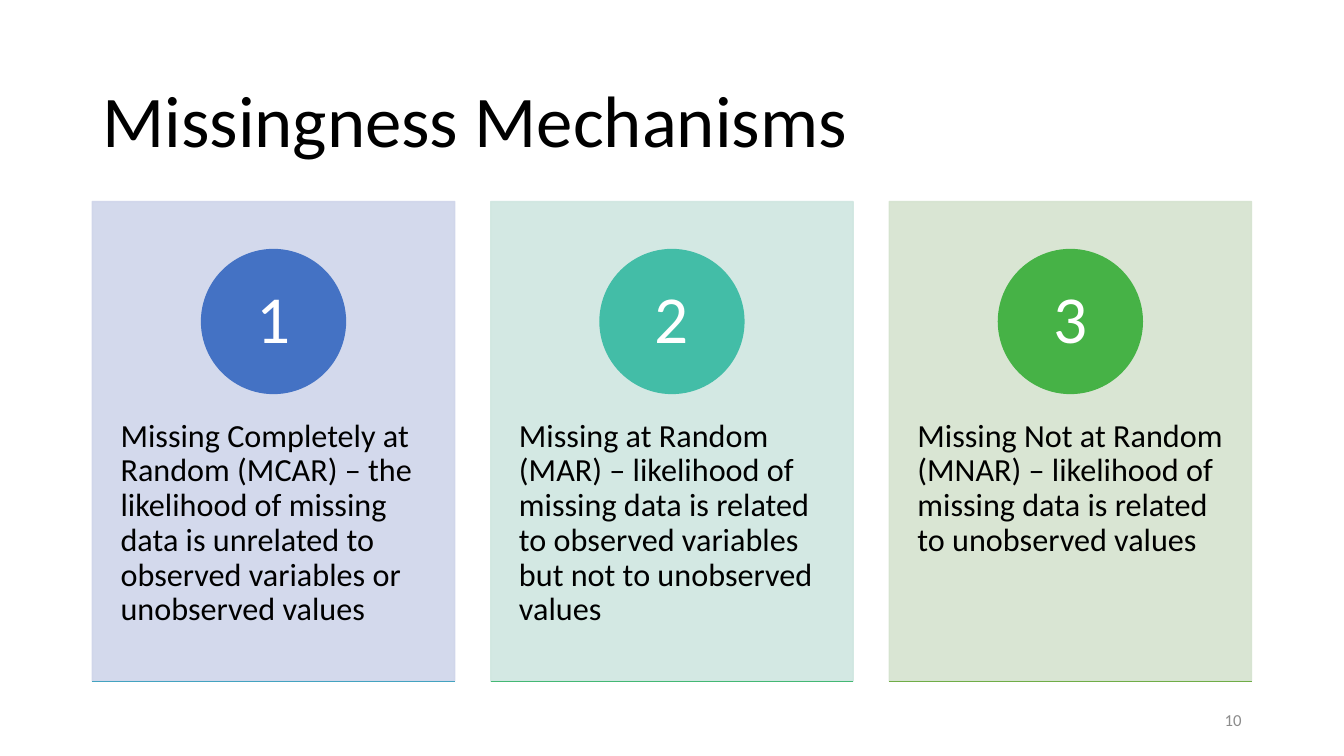
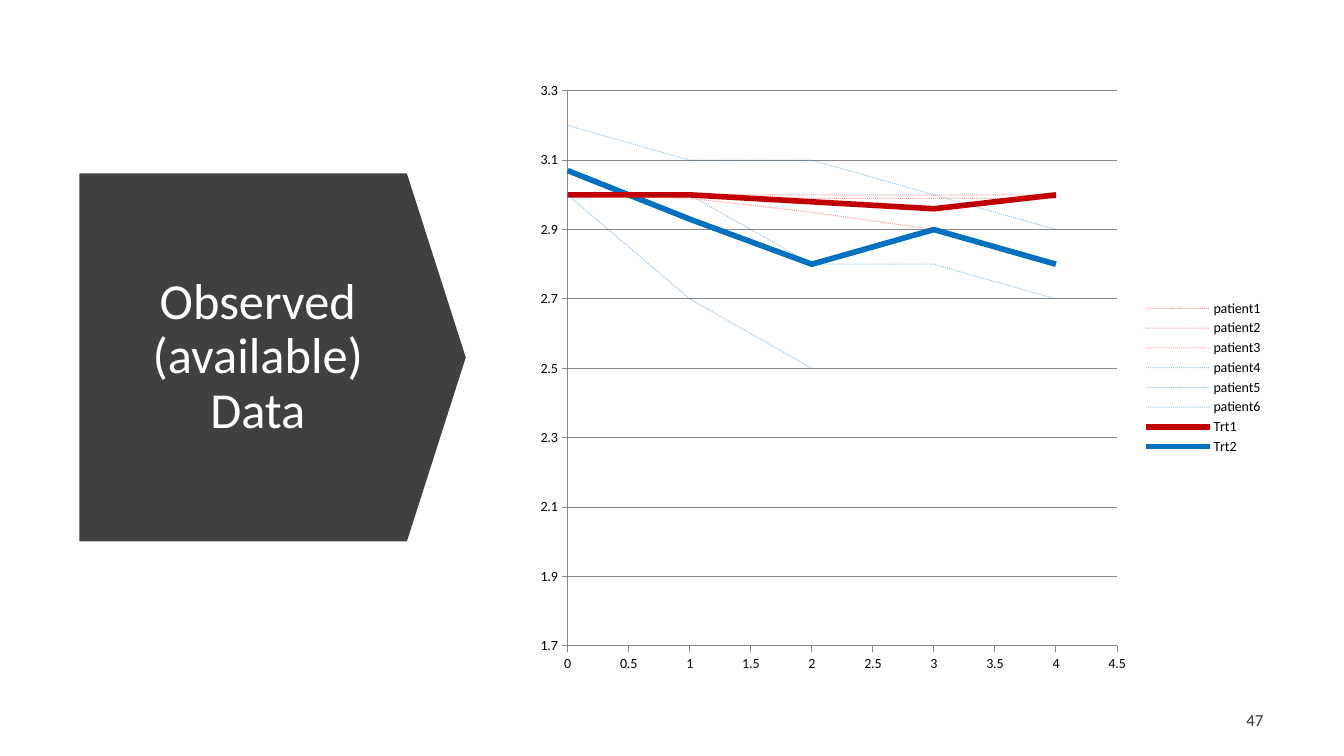
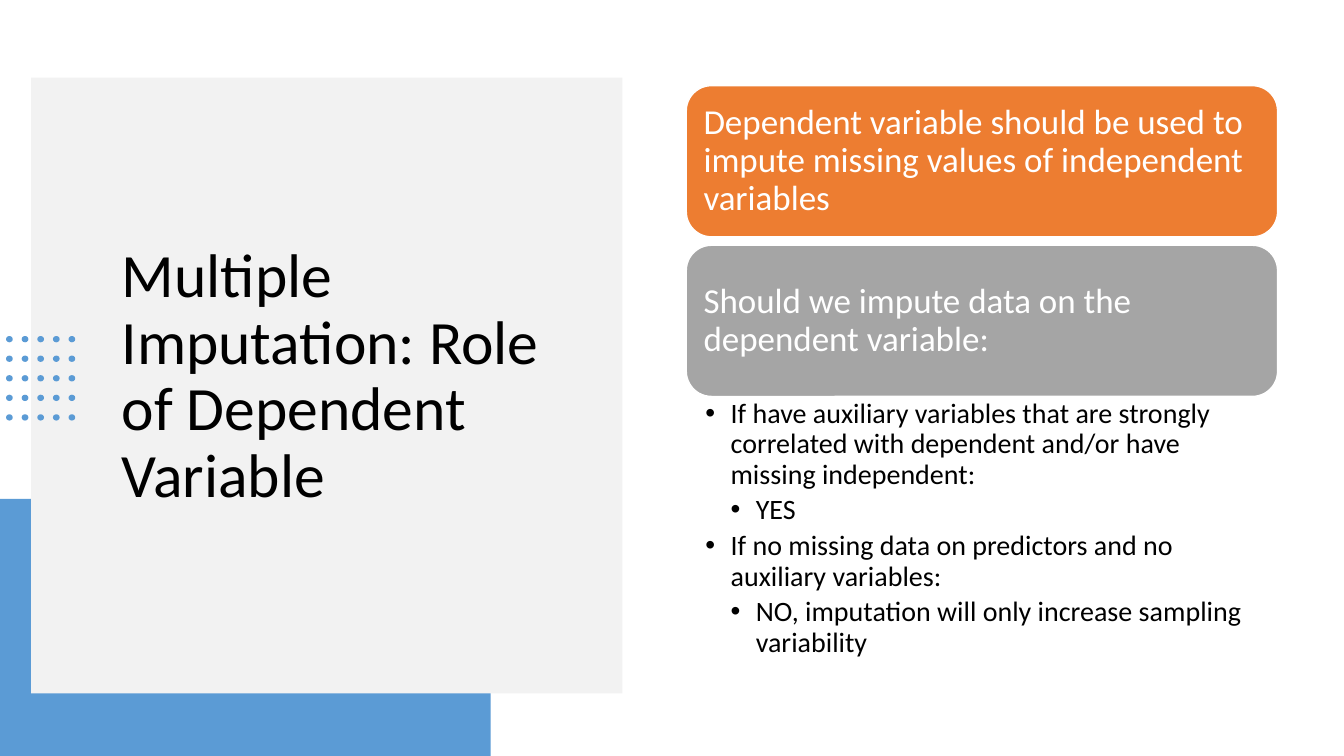
from dataclasses import dataclass
from itertools import product

from lxml.etree import SubElement
from pptx import Presentation
from pptx.chart.data import XyChartData
from pptx.dml.color import RGBColor
from pptx.enum.chart import XL_CHART_TYPE, XL_LEGEND_POSITION, XL_TICK_MARK
from pptx.enum.dml import MSO_LINE
from pptx.enum.shapes import MSO_CONNECTOR, MSO_SHAPE
from pptx.enum.text import MSO_ANCHOR, PP_ALIGN
from pptx.oxml.ns import qn
from pptx.util import Inches, Pt

COLUMNS, ROWS = 160, 90
CELL = Inches(1) / 12


@dataclass(frozen=True)
class Theme:
    font: str = "Calibri"
    black: str = "000000"
    white: str = "FFFFFF"
    charcoal: str = "404040"
    pale: str = "F2F2F2"
    sky: str = "5B9BD5"
    orange: str = "ED7D31"
    grey: str = "A5A5A5"
    axis: str = "878787"
    soft_number: str = "8C8C8C"
    dark_number: str = "333333"
    patient_red: str = "FF0000"
    treatment_red: str = "C00000"
    blue: str = "0070C0"
    title: int = 52
    side_title: int = 44
    arrow_title: int = 36
    numeral: int = 48
    statement: int = 25
    card: int = 23
    bullet: int = 20
    number: int = 12
    chart: int = 10
    leading: float = 0.9


THEME = Theme()

MECHANISMS = [
    ("Missing Completely at Random (MCAR) – the likelihood of missing data is "
     "unrelated to observed variables or unobserved values",
     "CFD5EA", "4472C4", "44A3C0"),
    ("Missing at Random (MAR) – likelihood of missing data is related to "
     "observed variables but not to unobserved values",
     "CFE6E0", "43BDA7", "44B874"),
    ("Missing Not at Random (MNAR) – likelihood of missing data is related to "
     "unobserved values",
     "D5E3CF", "46B246", "70AD47"),
]

PATIENTS = [
    ("patient1", THEME.patient_red, [3, 3, 2.99, 2.99, 2.99]),
    ("patient2", THEME.patient_red, [3, 3, 3, 3, 3]),
    ("patient3", THEME.patient_red, [3, 2.99, 2.95, 2.9]),
    ("patient4", THEME.blue, [3.2, 3.1, 3.1, 3, 2.9]),
    ("patient5", THEME.blue, [3, 3, 2.8, 2.8, 2.7]),
    ("patient6", THEME.blue, [3, 2.7, 2.5]),
]

TREATMENTS = [
    ("Trt1", THEME.treatment_red, [3, 3, 2.98, 2.96, 3]),
    ("Trt2", THEME.blue, [3.07, 2.93, 2.8, 2.9, 2.8]),
]

STATEMENTS = [
    ("Dependent variable should be used to impute missing values of "
     "independent variables", THEME.orange),
    ("Should we impute data on the dependent variable:", THEME.grey),
]

ADVICE = [
    (1, "If have auxiliary variables that are strongly correlated with "
        "dependent and/or have missing independent:"),
    (2, "YES"),
    (1, "If no missing data on predictors and no auxiliary variables:"),
    (2, "NO, imputation will only increase sampling variability"),
]


def cells(*counts):
    return [round(count * CELL) for count in counts]


def rgb(colour):
    return RGBColor.from_string(colour)


def fade(element, percent):
    for colour in element.iter(qn("a:srgbClr")):
        SubElement(colour, qn("a:alpha")).set("val", str(percent * 1000))


def write(box, lines, size, colour, align=PP_ALIGN.LEFT,
          anchor=MSO_ANCHOR.MIDDLE, insets=(0.1, 0.05, 0.1, 0.05)):
    frame = box.text_frame
    frame.text = "\n".join(lines)
    frame.word_wrap = True
    frame.vertical_anchor = anchor
    (frame.margin_left, frame.margin_top,
     frame.margin_right, frame.margin_bottom) = map(Inches, insets)
    for para in frame.paragraphs:
        para.alignment = align
        para.line_spacing = THEME.leading
        for span in para.runs:
            span.font.name = THEME.font
            span.font.size = Pt(size)
            span.font.color.rgb = rgb(colour)
    return frame


def add_text(page, place, lines, size, colour=THEME.black, **layout):
    box = page.shapes.add_textbox(*cells(*place))
    return write(box, lines, size, colour, **layout)


def add_panel(shapes, kind, place, fill, line=None):
    panel = shapes.add_shape(kind, *cells(*place))
    panel.shadow.inherit = False
    panel.fill.solid()
    panel.fill.fore_color.rgb = rgb(fill)
    if line:
        panel.line.color.rgb = rgb(line)
        panel.line.width = Pt(1)
    else:
        panel.line.fill.background()
    return panel


def add_rule(page, left, top, width, colour):
    rule = page.shapes.add_connector(
        MSO_CONNECTOR.STRAIGHT, *cells(left, top, left + width, top))
    rule.line.color.rgb = rgb(colour)
    rule.line.width = Pt(1)
    SubElement(rule.element.spPr, qn("a:effectLst"))


def add_page_number(page, number, right, colour):
    width = 7
    add_text(page, (right - width, 83.4, width, 4.8), [number],
             THEME.number, colour, align=PP_ALIGN.RIGHT)


def add_bullets(page, place, items):
    frame = add_text(page, place, [text for level, text in items],
                     THEME.bullet, anchor=MSO_ANCHOR.TOP,
                     insets=(0.19, 0.03, 0.19, 0.03))
    step = Inches(0.25)
    for para, (level, text) in zip(frame.paragraphs, items):
        para.level = level
        para.space_after = Pt(4)
        properties = para._p.get_or_add_pPr()
        properties.set("marL", str(level * step))
        properties.set("indent", str(-step))
        SubElement(properties, qn("a:buFont")).set("typeface", "Arial")
        SubElement(properties, qn("a:buChar")).set("char", "•")


def add_mechanism_card(page, place, numeral, text, tint, accent, edge):
    left, top, width, height = place
    card = add_panel(page.shapes, MSO_SHAPE.RECTANGLE, place, tint, tint)
    fade(card.element.spPr, 90)
    write(card, [text], THEME.card, THEME.black, anchor=MSO_ANCHOR.TOP,
          insets=(0.28, 2.16, 0.28, 0.36))
    size = 0.3 * height
    circle = add_panel(
        page.shapes, MSO_SHAPE.OVAL,
        (left + (width - size) / 2, top + 0.1 * height, size, size),
        accent, accent)
    write(circle, [numeral], THEME.numeral, THEME.white,
          align=PP_ALIGN.CENTER, insets=(0.11, 0.01, 0.11, 0.01))
    add_rule(page, left, top + height, width, edge)


def add_dot_grid(page, left, top, across, down, count):
    dots = page.shapes.add_group_shape()
    for column, row in product(range(count), repeat=2):
        place = (left + column * across, top + row * down, 0.8, 0.75)
        add_panel(dots.shapes, MSO_SHAPE.OVAL, place, THEME.sky)


def style_axis(axis, low, high, step):
    axis.minimum_scale, axis.maximum_scale = low, high
    axis.major_unit = step
    axis.major_tick_mark = XL_TICK_MARK.OUTSIDE
    axis.minor_tick_mark = XL_TICK_MARK.NONE
    axis.format.line.color.rgb = rgb(THEME.axis)
    axis.tick_labels.number_format = "General"
    axis.tick_labels.number_format_is_linked = False


def place_plot(chart, **shares):
    area = chart.element.find(".//" + qn("c:plotArea"))
    layout = area.find(qn("c:layout"))
    if layout is None:
        layout = area.makeelement(qn("c:layout"))
        area.insert(0, layout)
    manual = SubElement(layout, qn("c:manualLayout"))
    settings = {"layoutTarget": "inner", "xMode": "edge", "yMode": "edge",
                **shares}
    for name, value in settings.items():
        SubElement(manual, qn("c:" + name)).set("val", str(value))


def add_patient_chart(page, place):
    data = XyChartData()
    for name, colour, values in PATIENTS + TREATMENTS:
        points = data.add_series(name)
        for visit, value in enumerate(values):
            points.add_data_point(visit, value)
    chart = page.shapes.add_chart(
        XL_CHART_TYPE.XY_SCATTER_SMOOTH_NO_MARKERS, *cells(*place), data).chart
    chart.has_title = False
    chart.font.name = THEME.font
    chart.font.size = Pt(THEME.chart)
    chart.font.color.rgb = rgb(THEME.black)
    chart.has_legend = True
    chart.legend.position = XL_LEGEND_POSITION.RIGHT
    chart.legend.include_in_layout = False
    style_axis(chart.category_axis, 0, 4.5, 0.5)
    style_axis(chart.value_axis, 1.7, 3.3, 0.2)
    chart.category_axis.has_major_gridlines = False
    chart.value_axis.has_major_gridlines = True
    chart.value_axis.major_gridlines.format.line.color.rgb = rgb(THEME.axis)
    place_plot(chart, x=0.056, y=0.033, w=0.735, h=0.904)
    plot = chart.plots[0]
    plot.vary_by_categories = False
    for series, (name, colour, values) in zip(
            plot.series, PATIENTS + TREATMENTS):
        series.smooth = True
        line = series.format.line
        line.color.rgb = rgb(colour)
        if name.startswith("patient"):
            line.width = Pt(0.75)
            line.dash_style = MSO_LINE.ROUND_DOT
            fade(series._element, 40)
        else:
            line.width = Pt(4)


def build_mechanisms(page):
    left, width, gap = 11, 138, 4.3
    add_text(page, (left, 7.3, width, 14.9), ["Missingness Mechanisms"],
             THEME.title)
    add_page_number(page, "10", left + width, THEME.soft_number)
    count = len(MECHANISMS)
    card_width = (width - (count - 1) * gap) / count
    for index, mechanism in enumerate(MECHANISMS):
        place = (left + index * (card_width + gap), 24, card_width, 57.1)
        add_mechanism_card(page, place, str(index + 1), *mechanism)


def build_observed_data(page):
    arrow = add_panel(page.shapes, MSO_SHAPE.DOWN_ARROW,
                      (10.55, 19.55, 43.8, 46), THEME.charcoal)
    arrow.rotation = 270
    arrow.adjustments[0] = 1
    arrow.adjustments[1] = 0.16
    add_text(page, (13.4, 25.8, 34.6, 33.5), ["Observed (available) Data"],
             THEME.arrow_title, THEME.white, align=PP_ALIGN.CENTER)
    add_page_number(page, "47", 151.6, THEME.dark_number)
    add_patient_chart(page, (62.6, 8.4, 89, 73.1))


def build_dependent_variable(page):
    add_panel(page.shapes, MSO_SHAPE.RECTANGLE,
              (0, 59.4, 58.4, ROWS - 59.4), THEME.sky)
    add_panel(page.shapes, MSO_SHAPE.RECTANGLE,
              (3.7, 9.25, 70.4, 73.3), THEME.pale)
    add_text(page, (13.3, 17.6, 55.1, 54.7),
             ["Multiple Imputation: Role of Dependent Variable"],
             THEME.side_title)
    add_dot_grid(page, 0.72, 40, 1.86, 2.33, 5)
    left, top, width, height, gap = 81.7, 10.2, 70.4, 18, 1
    for index, (text, fill) in enumerate(STATEMENTS):
        place = (left, top + index * (height + gap), width, height)
        card = add_panel(page.shapes, MSO_SHAPE.ROUNDED_RECTANGLE,
                         place, fill, THEME.white)
        write(card, [text], THEME.statement, THEME.white,
              insets=(0.1, 0.1, 0.1, 0.1))
    bullets_top = top + len(STATEMENTS) * (height + gap) - gap
    add_bullets(page, (left, bullets_top, width, 32.6), ADVICE)


def main():
    deck = Presentation()
    deck.slide_width, deck.slide_height = cells(COLUMNS, ROWS)
    blank = deck.slide_layouts[6]
    for build in (build_mechanisms, build_observed_data,
                  build_dependent_variable):
        build(deck.slides.add_slide(blank))
    deck.save("out.pptx")


if __name__ == "__main__":
    main()
